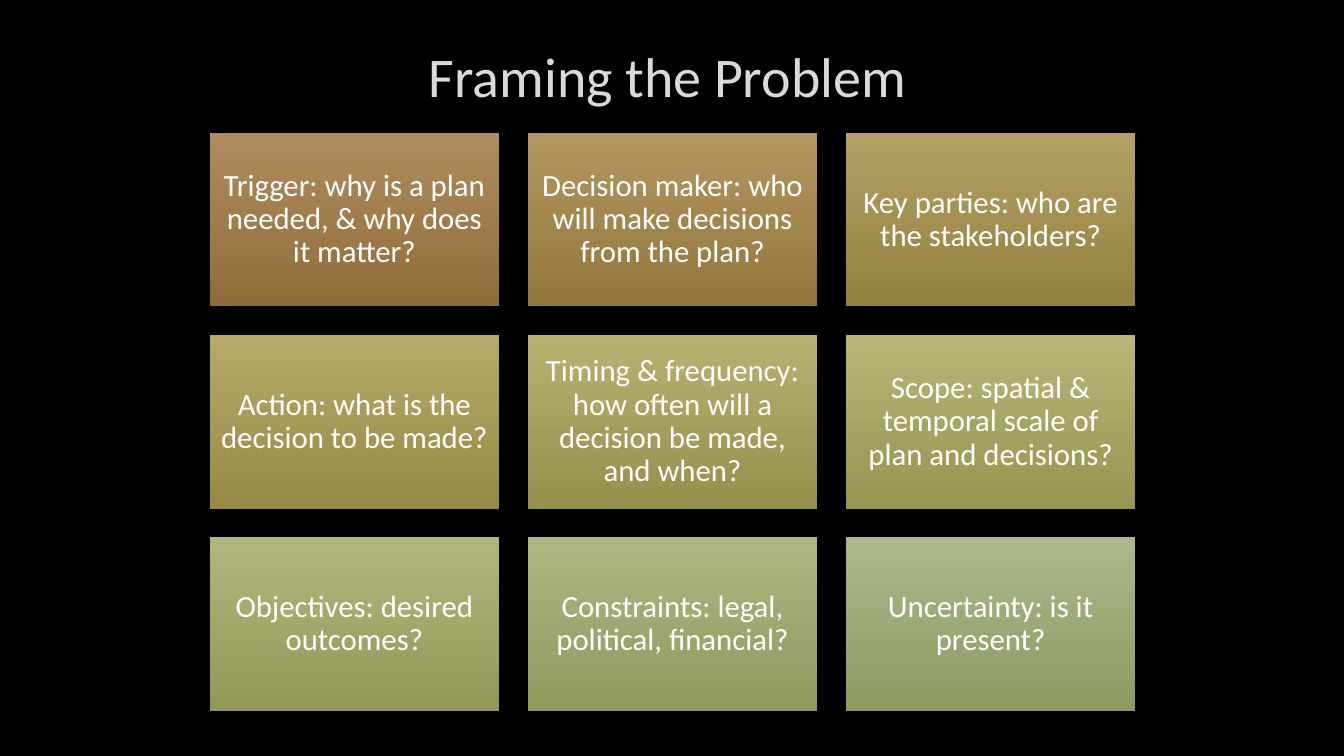
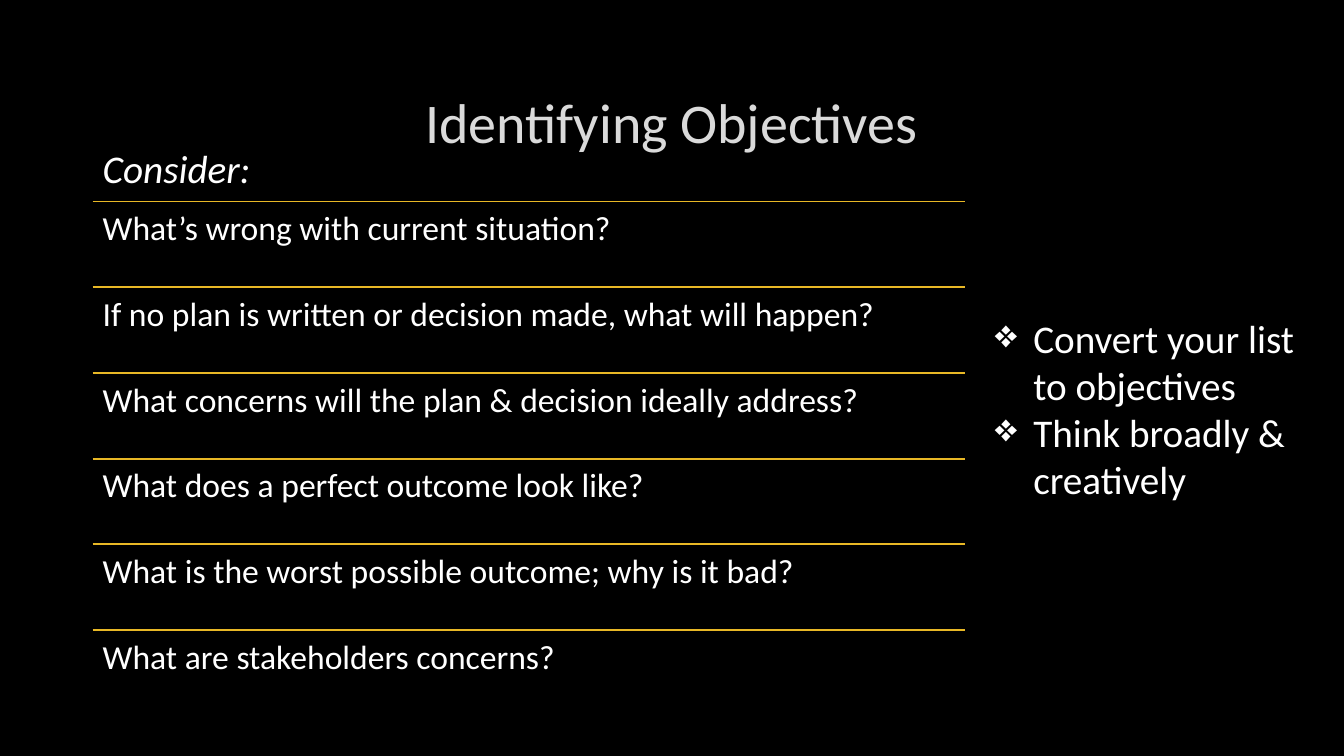
import pptx
import pptx.util
import pptx.dml.color
import pptx.enum.text
import pptx.enum.shapes
import pptx.oxml
import pptx.oxml.ns
from dataclasses import dataclass
from lxml import etree

Inches = pptx.util.Inches
Pt = pptx.util.Pt
RGB = pptx.dml.color.RGBColor.from_string
ALIGN = pptx.enum.text.PP_ALIGN
ANCHOR = pptx.enum.text.MSO_ANCHOR
AUTOSIZE = pptx.enum.text.MSO_AUTO_SIZE
qn = pptx.oxml.ns.qn


@dataclass(frozen=True)
class Theme:
    font: str = "Calibri"
    background: str = "000000"
    title: str = "DADADA"
    title_outline: str = "404040"
    text: str = "FFFFFF"
    rule: str = "E8B826"
    title_size: int = 40
    lead_size: int = 28
    question_size: int = 24
    tile_size: int = 22
    rule_width: float = 1.25


THEME = Theme()

FRAMING = {
    "title": "Framing the Problem",
    "title_at": (0.96, 0.22, 11.32, 1.06),
    "tiles": [
        ("Trigger: why is a plan needed, & why does it matter?", "AF8C5D", "906D38"),
        ("Decision maker: who will make decisions from the plan?", "B29660", "92773C"),
        ("Key parties: who are the stakeholders?", "B4A064", "948141"),
        ("Action: what is the decision to be made?", "B6AA69", "968A46"),
        ("Timing & frequency: how often will a decision be made, and when?", "B6B16F", "96904D"),
        ("Scope: spatial & temporal scale of plan and decisions?", "B6B676", "969653"),
        ("Objectives: desired outcomes?", "B1B67C", "939858"),
        ("Constraints: legal, political, financial?", "AEB683", "909A5D"),
        ("Uncertainty: is it present?", "ACB78A", "8D9B63"),
    ],
}

OBJECTIVES = {
    "title": "Identifying Objectives",
    "title_at": (1, 0.67, 11.32, 1.06),
    "lead": "Consider:",
    "questions": [
        "What’s wrong with current situation?",
        "If no plan is written or decision made, what will happen?",
        "What concerns will the plan & decision ideally address?",
        "What does a perfect outcome look like?",
        "What is the worst possible outcome; why is it bad?",
        "What are stakeholders concerns?",
    ],
    "advice": ["Convert your list to objectives", "Think broadly & creatively"],
}


def set_all(target, **values):
    for name, value in values.items():
        setattr(target, name, value)


def place(shape, at):
    for name, value in zip(("left", "top", "width", "height"), at):
        setattr(shape, name, Inches(value))


def write(tf, lines, size, color=THEME.text, align=ALIGN.LEFT, spacing=1.0,
          inset=None, anchor=ANCHOR.TOP, italic=False):
    set_all(tf, word_wrap=True, auto_size=AUTOSIZE.NONE, vertical_anchor=anchor)
    if inset is not None:
        for side in ("left", "top", "right", "bottom"):
            setattr(tf, "margin_" + side, Inches(inset))
    for i, line in enumerate(lines):
        p = tf.add_paragraph() if i else tf.paragraphs[0]
        set_all(p, alignment=align, line_spacing=spacing)
        r = p.add_run()
        r.text = line
        set_all(r.font, name=THEME.font, size=Pt(size), italic=italic)
        r.font.color.rgb = RGB(color)


def add_text(s, at, lines, size, **style):
    tf = s.shapes.add_textbox(*map(Inches, at)).text_frame
    write(tf, lines, size, **style)
    return tf


def outline(r, color):
    ln = pptx.oxml.parse_xml(
        f'<a:ln {pptx.oxml.ns.nsdecls("a")} w="{Pt(0.75)}"><a:solidFill>'
        f'<a:srgbClr val="{color}"><a:alpha val="10000"/></a:srgbClr>'
        '</a:solidFill></a:ln>')
    r.font._element.insert(0, ln)


def add_slide(prs, content):
    s = prs.slides.add_slide(prs.slide_layouts[5])
    title = s.shapes.title
    place(title, content["title_at"])
    write(title.text_frame, [content["title"]], THEME.title_size,
          color=THEME.title, align=ALIGN.CENTER, anchor=ANCHOR.MIDDLE)
    outline(title.text_frame.paragraphs[0].runs[0], THEME.title_outline)
    return s


def add_tile(s, at, text, top_color, bottom_color):
    sp = s.shapes.add_shape(pptx.enum.shapes.MSO_SHAPE.RECTANGLE, *map(Inches, at))
    sp.shadow.inherit = False
    sp.line.fill.background()
    sp.fill.gradient()
    sp.fill.gradient_angle = 270
    for stop, position, color in zip(sp.fill.gradient_stops, (0, 1), (top_color, bottom_color)):
        stop.position = position
        stop.color.rgb = RGB(color)
    write(sp.text_frame, [text], THEME.tile_size, align=ALIGN.CENTER,
          spacing=0.9, inset=0.09, anchor=ANCHOR.MIDDLE)


def add_rule(s, left, right, y):
    rule = s.shapes.add_connector(pptx.enum.shapes.MSO_CONNECTOR.STRAIGHT,
                                  *map(Inches, (left, y, right, y)))
    rule.line.color.rgb = RGB(THEME.rule)
    rule.line.width = Pt(THEME.rule_width)
    etree.SubElement(rule._element.spPr, qn("a:effectLst"))


def add_bullets(tf, char, indent):
    for p in tf.paragraphs:
        pPr = p._p.get_or_add_pPr()
        pPr.set("marL", str(Inches(indent)))
        pPr.set("indent", str(-Inches(indent)))
        etree.SubElement(pPr, qn("a:buChar")).set("char", char)


def build_framing(prs):
    s = add_slide(prs, FRAMING)
    left, top, width, height = 2.08, 1.32, 2.87, 1.72
    columns, grid_width = 3, 9.18
    gap = (grid_width - columns * width) / (columns - 1)
    for i, tile in enumerate(FRAMING["tiles"]):
        row, column = divmod(i, columns)
        at = (left + column * (width + gap), top + row * (height + gap), width, height)
        add_tile(s, at, *tile)


def build_objectives(prs):
    s = add_slide(prs, OBJECTIVES)
    left, top, width, row_height = 0.92, 2, 8.65, 0.85
    for i, question in enumerate(OBJECTIVES["questions"]):
        y = top + i * row_height
        add_rule(s, left, left + width, y)
        add_text(s, (left, y, width, row_height), [question],
                 THEME.question_size, spacing=0.9, inset=0.1)
    advice = add_text(s, (9.77, 3.07, 3.35, 1.99), OBJECTIVES["advice"], THEME.lead_size)
    add_bullets(advice, "❖", 0.38)
    add_text(s, (left, 1.38, 4.14, 0.57), [OBJECTIVES["lead"]], THEME.lead_size, italic=True)


def main():
    prs = pptx.Presentation()
    set_all(prs, slide_width=Inches(13.33), slide_height=Inches(7.5))
    background = prs.slide_master.background.fill
    background.solid()
    background.fore_color.rgb = RGB(THEME.background)
    build_framing(prs)
    build_objectives(prs)
    prs.save("out.pptx")


if __name__ == "__main__":
    main()
